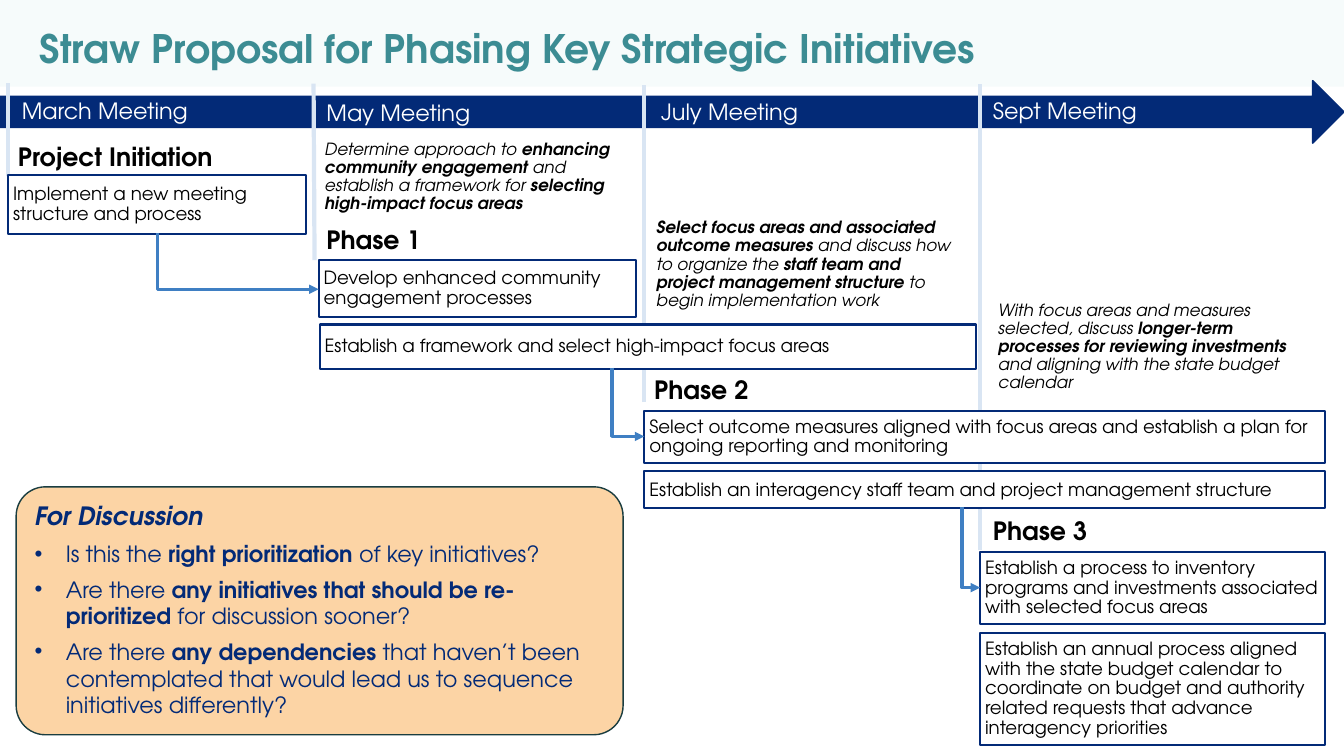
from dataclasses import dataclass

from lxml import etree
from pptx import Presentation
from pptx.dml.color import RGBColor
from pptx.enum import shapes, text
from pptx.oxml.ns import qn
from pptx.util import Pt

EMU_PER_PX = 9144  # 100 px to the inch
FONT = "TeX Gyre Adventor"

NAVY = RGBColor(0x03, 0x2A, 0x77)
TEAL = RGBColor(0x3C, 0x8C, 0x93)
PALE_TEAL = RGBColor(0xF6, 0xFB, 0xFB)
BLUE = RGBColor(0x3F, 0x7F, 0xC3)
PALE_BLUE = RGBColor(0xD9, 0xE5, 0xF3)
PEACH = RGBColor(0xFC, 0xD4, 0xA5)
DARK_GREEN = RGBColor(0x1A, 0x3D, 0x40)
WHITE = RGBColor(0xFF, 0xFF, 0xFF)
BLACK = RGBColor(0, 0, 0)


@dataclass
class Label:
    left: int
    top: int
    width: int
    wording: str


@dataclass
class Box:
    left: int
    top: int
    width: int
    height: int
    wording: str  # asterisks enclose bold words
    spacing: float = 0.9


@dataclass
class Line:
    x1: int
    y1: int
    x2: int
    y2: int


MEETINGS = [
    Label(12, 91, 247, "March Meeting"),
    Label(314, 93, 247, "May Meeting"),
    Label(646, 92, 170, "July Meeting"),
    Label(975, 91, 212, "Sept Meeting"),
]
PHASES = [
    Label(8, 135, 249, "Project Initiation"),
    Label(314, 218, 190, "Phase 1"),
    Label(639, 366, 142, "Phase 2"),
    Label(975, 506, 142, "Phase 3"),
]
DIVIDERS = [
    Line(8, 175, 8, 82),
    Line(312, 258, 311, 83),
    Line(639, 399, 639, 84),
    Line(972, 546, 972, 83),
]
HANDOFFS = [
    Line(156, 231, 316, 287),
    Line(607, 365, 639, 433),
    Line(954, 503, 972, 583),
]
TASKS = [
    Box(8, 174, 296, 58, "Implement a new meeting structure and process"),
    Box(316, 258, 315, 57, "Develop enhanced community engagement processes"),
    Box(317, 322, 651, 44, "Establish a framework and select high-impact focus areas"),
    Box(639, 408, 675, 51, "Select outcome measures aligned with focus areas and "
        "establish a plan for ongoing reporting and monitoring"),
    Box(639, 467, 675, 37, "Establish an interagency staff team and project "
        "management structure", 1.0),
    Box(972, 548, 342, 71, "Establish a process to inventory programs and "
        "investments associated with selected focus areas"),
    Box(972, 628, 342, 111, "Establish an annual process aligned with the state budget "
        "calendar to coordinate on budget and authority related requests that "
        "advance interagency priorities"),
]
NOTES = [
    Box(317, 132, 318, 87, "Determine approach to *enhancing community engagement *and "
        "establish a framework for *selecting high-impact focus areas*"),
    Box(646, 219, 308, 87, "*Select focus areas and associated outcome measures *and "
        "discuss how to organize the *staff team and project management structure *"
        "to begin implementation work"),
    Box(985, 301, 325, 87, "With focus areas and measures selected, discuss *longer-term "
        "processes for reviewing investments *and aligning with the state budget calendar"),
]
QUESTIONS = [
    "Is this the *right prioritization *of key initiatives?",
    "Are there *any initiatives that should be re-prioritized* for discussion sooner?",
    "Are there *any dependencies *that haven’t been contemplated that would lead us "
    "to sequence initiatives differently?",
]


def px(length: float) -> int:
    return round(length * EMU_PER_PX)


def style(paragraph, size: int, color: RGBColor, bold: bool = False,
          italic: bool = False) -> None:
    font = paragraph.font
    font.name, font.size, font.bold, font.italic = FONT, Pt(size), bold, italic
    font.color.rgb = color


def write(paragraph, wording: str) -> None:
    for index, part in enumerate(wording.split("*")):
        if part:
            run = paragraph.add_run()
            run.text = part
            if index % 2:
                run.font.bold = True


def add_shape(slide, kind, left: int, top: int, width: int, height: int,
              fill: RGBColor, line: RGBColor | None = None, weight: float = 1):
    shape = slide.shapes.add_shape(kind, px(left), px(top), px(width), px(height))
    shape.shadow.inherit = False
    shape.fill.solid()
    shape.fill.fore_color.rgb = fill
    if line is None:
        shape.line.fill.background()
    else:
        shape.line.color.rgb = line
        shape.line.width = Pt(weight)
    return shape


def add_box(slide, box: Box, size: int, line: RGBColor | None = None,
            italic: bool = False) -> None:
    shape = add_shape(slide, shapes.MSO_SHAPE.RECTANGLE, box.left, box.top,
                      box.width, box.height, WHITE, line, 1.5)
    frame = shape.text_frame
    frame.word_wrap = True
    frame.vertical_anchor = text.MSO_ANCHOR.MIDDLE
    frame.margin_left = frame.margin_right = px(5)
    frame.margin_top = frame.margin_bottom = px(5)
    paragraph = frame.paragraphs[0]
    paragraph.alignment = text.PP_ALIGN.LEFT
    paragraph.line_spacing = box.spacing
    write(paragraph, box.wording)
    style(paragraph, size, BLACK, italic=italic)


def add_label(slide, label: Label, size: int, height: int, color: RGBColor,
              bold: bool = False) -> None:
    shape = slide.shapes.add_textbox(px(label.left), px(label.top),
                                     px(label.width), px(height))
    shape.text_frame.word_wrap = True
    paragraph = shape.text_frame.paragraphs[0]
    write(paragraph, label.wording)
    style(paragraph, size, color, bold)


def add_line(slide, kind, line: Line, color: RGBColor, weight: float):
    connector = slide.shapes.add_connector(kind, px(line.x1), px(line.y1),
                                           px(line.x2), px(line.y2))
    connector.line.color.rgb = color
    connector.line.width = Pt(weight)
    etree.SubElement(connector.element.spPr, qn("a:effectLst"))
    return connector


def add_handoff(slide, line: Line) -> None:
    """Draw an arrow that runs down, then right: a turned one-bend connector."""
    center_x, center_y = (line.x1 + line.x2) / 2, (line.y1 + line.y2) / 2
    half_x, half_y = (line.x2 - line.x1) / 2, (line.y2 - line.y1) / 2
    turned = Line(center_x - half_y, center_y - half_x,
                  center_x + half_y, center_y + half_x)
    connector = add_line(slide, shapes.MSO_CONNECTOR.ELBOW, turned, BLUE, 2.25)
    properties = connector.element.spPr
    properties.find(qn("a:prstGeom")).set("prst", "bentConnector2")
    transform = properties.find(qn("a:xfrm"))
    transform.set("rot", str(270 * 60000))
    transform.set("flipH", "1")
    etree.SubElement(properties.find(qn("a:ln")), qn("a:tailEnd"), type="triangle")


def add_discussion(slide) -> None:
    panel = add_shape(slide, shapes.MSO_SHAPE.ROUNDED_RECTANGLE, 16, 483, 602, 246,
                      PEACH, DARK_GREEN)
    panel.adjustments[0] = 0.118
    frame = panel.text_frame
    frame.word_wrap = True
    frame.vertical_anchor = text.MSO_ANCHOR.TOP
    heading = frame.paragraphs[0]
    heading.alignment = text.PP_ALIGN.LEFT
    heading.space_after = Pt(7)
    write(heading, "For Discussion")
    style(heading, 18, NAVY, bold=True, italic=True)
    for question in QUESTIONS:
        paragraph = frame.add_paragraph()
        properties = paragraph._p.get_or_add_pPr()
        properties.set("marL", str(px(31)))
        properties.set("indent", str(px(-31)))
        etree.SubElement(properties, qn("a:buFont"), typeface="Arial")
        etree.SubElement(properties, qn("a:buChar"), char="•")
        paragraph.alignment = text.PP_ALIGN.LEFT
        paragraph.space_after = Pt(6)
        write(paragraph, question)
        style(paragraph, 16, NAVY)


def main() -> None:
    presentation = Presentation()
    presentation.slide_width, presentation.slide_height = px(1333), px(750)
    slide = presentation.slides.add_slide(presentation.slide_layouts[5])

    # Title on its pale band
    title = slide.shapes.title
    title.left, title.top, title.width, title.height = px(29), px(24), px(1249), px(63)
    title.text_frame.auto_size = text.MSO_AUTO_SIZE.NONE
    title.text_frame.vertical_anchor = text.MSO_ANCHOR.TOP
    paragraph = title.text_frame.paragraphs[0]
    paragraph.alignment = text.PP_ALIGN.LEFT
    paragraph.line_spacing = 0.9
    write(paragraph, "Straw Proposal for Phasing Key Strategic Initiatives")
    style(paragraph, 28, TEAL, bold=True)
    band = add_shape(slide, shapes.MSO_SHAPE.RECTANGLE, 0, 0, 1333, 86, PALE_TEAL)
    title.element.addprevious(band.element)

    # Timeline
    add_shape(slide, shapes.MSO_SHAPE.RIGHT_ARROW, 0, 80, 1333, 62, NAVY, NAVY)
    for divider in DIVIDERS:
        add_line(slide, shapes.MSO_CONNECTOR.STRAIGHT, divider, PALE_BLUE, 3)
    for meeting in MEETINGS:
        add_label(slide, meeting, 16, 37, WHITE)

    # Phases and their tasks
    for note in NOTES:
        add_box(slide, note, 12, italic=True)
    for task in TASKS:
        add_box(slide, task, 13, NAVY)
    for phase in PHASES:
        add_label(slide, phase, 18, 40, BLACK, bold=True)
    for handoff in HANDOFFS:
        add_handoff(slide, handoff)

    add_discussion(slide)
    presentation.save("out.pptx")


if __name__ == "__main__":
    main()
